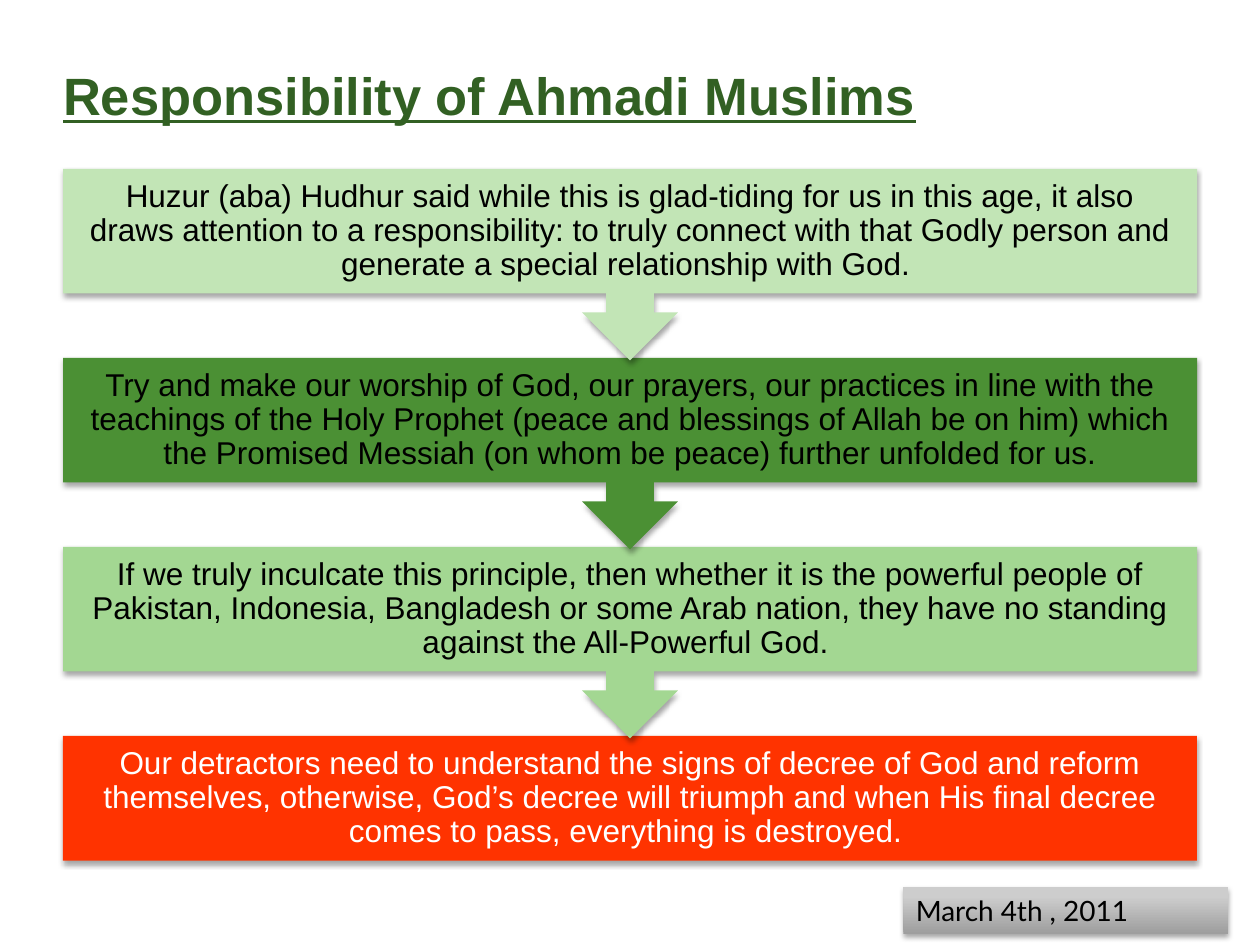
from copy import deepcopy

from lxml import etree
from pptx import Presentation
from pptx import util as u
from pptx.dml.color import RGBColor
from pptx.enum import shapes, text
from pptx.oxml import ns

COLOURS = {
    "title": "326023", "pale": "C2E5B6", "dark": "4B9034", "light": "A3D792",
    "red": "FF3300", "black": "000000", "white": "FFFFFF",
    "grey": "9E9E9E", "silver": "CDCDCD", "bright": "CECECE",
}
STEPS = [
    ("Huzur (aba) Hudhur said while this is glad-tiding for us in this age, it also "
     "draws attention to a responsibility: to truly connect with that Godly person and "
     "generate a special relationship with God. ", "pale", "black"),
    ("Try and make our worship of God, our prayers, our practices in line with the "
     "teachings of the Holy Prophet (peace and blessings of Allah be on him) which "
     "the Promised Messiah (on whom be peace) further unfolded for us.", "dark", "black"),
    ("If we truly inculcate this principle, then whether it is the powerful people of "
     "Pakistan, Indonesia, Bangladesh or some Arab nation, they have no standing "
     "against the All-Powerful God. ", "light", "black"),
    ("Our detractors need to understand the signs of decree of God and reform "
     "themselves, otherwise, God’s decree will triumph and when His final decree "
     "comes to pass, everything is destroyed. ", "red", "white"),
]


def colour(name):
    return RGBColor.from_string(COLOURS[name])


def inches(box):
    return [u.Inches(length) for length in box]


def add_run(paragraph, words, size, font_name, colour_name):
    run = paragraph.add_run()
    run.text = words
    run.font.size = u.Pt(size)
    run.font.name = font_name
    run.font.color.rgb = colour(colour_name)
    return run


def add_soft_shadow(shape):
    """Replace the theme's shadow with a soft one straight below the shape."""
    shape.shadow.inherit = False
    effects = shape._element.spPr.find(ns.qn("a:effectLst"))
    shadow = etree.SubElement(effects, ns.qn("a:outerShdw"), blurRad=str(u.Pt(3.1)),
                              dist=str(u.Pt(1.8)), dir="5400000", rotWithShape="0")
    tint = etree.SubElement(shadow, ns.qn("a:srgbClr"), val=COLOURS["black"])
    etree.SubElement(tint, ns.qn("a:alpha"), val="35000")


def add_panel(parent, kind, box):
    shape = parent.add_shape(kind, *inches(box))
    shape.line.fill.background()
    add_soft_shadow(shape)
    return shape


def set_title(slide, box):
    title = slide.shapes.title
    title.left, title.top, title.width, title.height = inches(box)
    frame = title.text_frame
    frame.margin_left = frame.margin_top = frame.margin_right = frame.margin_bottom = 0
    frame.vertical_anchor = text.MSO_ANCHOR.TOP
    paragraph = frame.paragraphs[0]
    paragraph.alignment = text.PP_ALIGN.LEFT
    run = add_run(paragraph, "Responsibility of Ahmadi Muslims", 30, "Arial", "title")
    run.font.bold = run.font.underline = True


def add_step_text(parent, box, words, colour_name):
    frame = parent.add_textbox(*inches(box)).text_frame
    frame.word_wrap = True
    frame.vertical_anchor = text.MSO_ANCHOR.MIDDLE
    frame.margin_left = frame.margin_right = u.Inches(0.14)
    frame.margin_top = frame.margin_bottom = u.Inches(0.14)
    paragraph = frame.paragraphs[0]
    paragraph.alignment = text.PP_ALIGN.CENTER
    paragraph.line_spacing = 0.9
    add_run(paragraph, words, 18, "Arial", colour_name)


def add_process(slide, box):
    """Stack the steps from the last up, so that each arrow lies over the next step."""
    left, top, width, height = box
    step_height, callout_height = 0.99, 1.52
    pitch = (height - step_height) / (len(STEPS) - 1)
    parent = slide.shapes.add_group_shape().shapes
    for index, (words, fill, ink) in reversed(list(enumerate(STEPS))):
        step_top = top + index * pitch
        if index == len(STEPS) - 1:
            shape = add_panel(parent, shapes.MSO_SHAPE.RECTANGLE,
                              (left, step_top, width, step_height))
        else:
            shape = add_panel(parent, shapes.MSO_SHAPE.UP_ARROW_CALLOUT,
                              (left, step_top, width, callout_height))
            shape.rotation = 180
        shape.fill.solid()
        shape.fill.fore_color.rgb = colour(fill)
        add_step_text(parent, (left, step_top, width, step_height), words, ink)


def add_date(slide, box):
    shape = add_panel(slide.shapes, shapes.MSO_SHAPE.RECTANGLE, box)
    shape.fill.gradient()
    shape.fill.gradient_angle = 90
    stop_list = shape._element.spPr.find(".//" + ns.qn("a:gsLst"))
    stop_list.append(deepcopy(stop_list[-1]))
    stops = [(0, "grey"), (0.8, "silver"), (1, "bright")]
    for stop, (position, name) in zip(shape.fill.gradient_stops, stops):
        stop.position = position
        stop.color.rgb = colour(name)
    frame = shape.text_frame
    frame.word_wrap = True
    frame.auto_size = text.MSO_AUTO_SIZE.SHAPE_TO_FIT_TEXT
    frame.vertical_anchor = text.MSO_ANCHOR.TOP
    paragraph = frame.paragraphs[0]
    paragraph.alignment = text.PP_ALIGN.LEFT
    add_run(paragraph, "March 4th , 2011", 16, "Lato", "black")


def main():
    presentation = Presentation()
    presentation.slide_width, presentation.slide_height = inches((10, 7.5))
    slide = presentation.slides.add_slide(presentation.slide_layouts.get_by_name("Title Only"))
    set_title(slide, (0.5, 0.5, 9, 1))
    add_process(slide, (0.5, 1.34, 9, 5.49))
    add_date(slide, (7.17, 7.04, 2.58, 0.37))
    presentation.save("out.pptx")


if __name__ == "__main__":
    main()
